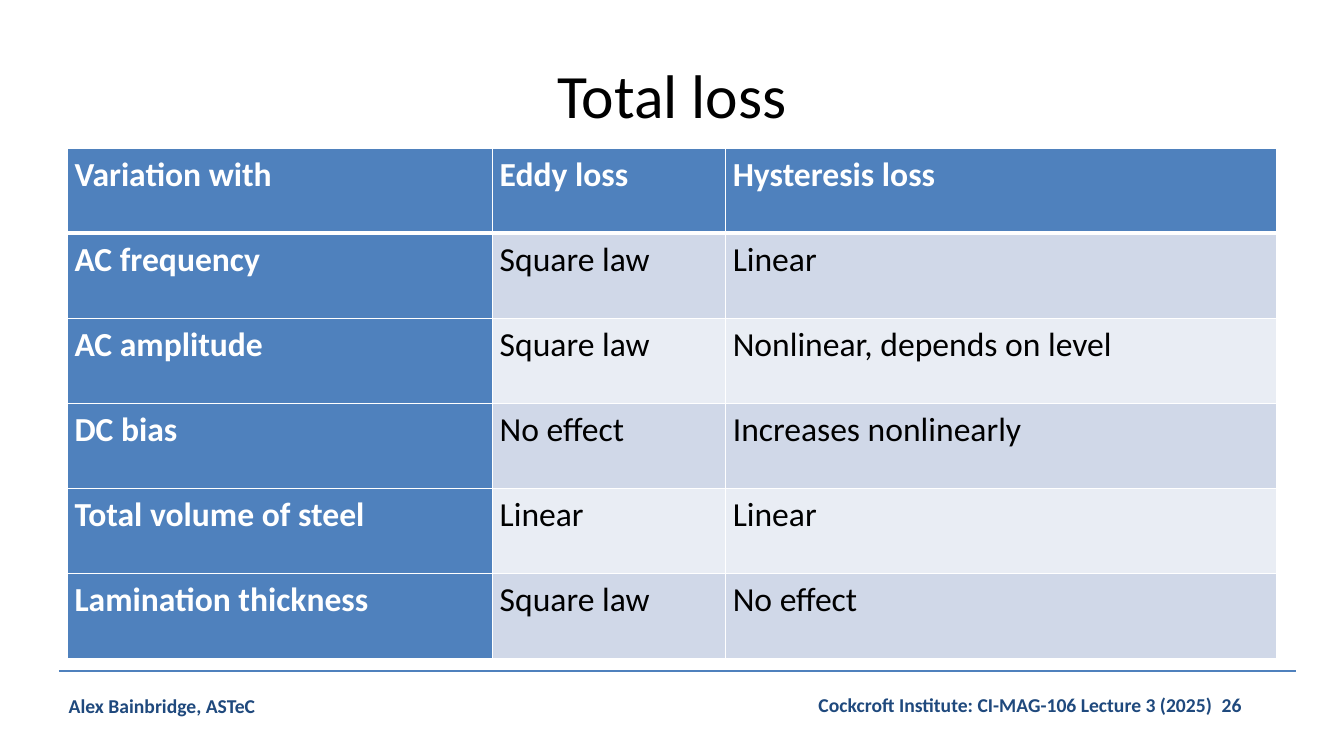
from dataclasses import dataclass

from pptx import Presentation
from pptx.dml.color import RGBColor
from pptx.enum.shapes import MSO_CONNECTOR
from pptx.enum.text import MSO_ANCHOR, PP_ALIGN
from pptx.oxml import parse_xml
from pptx.oxml.ns import nsdecls
from pptx.util import Pt


@dataclass(frozen=True)
class Theme:
    font: str = "Calibri"
    blue: str = "4F81BD"
    navy: str = "1F497D"
    white: str = "FFFFFF"
    black: str = "000000"
    bands: tuple = ("D0D8E8", "E9EDF4")
    title_size: int = 44
    table_size: int = 24
    footer_size: int = 14


TITLE = "Total loss"
ROWS = [
    ("Variation with", "Eddy loss", "Hysteresis loss"),
    ("AC frequency", "Square law", "Linear"),
    ("AC amplitude", "Square law", "Nonlinear, depends on level"),
    ("DC bias", "No effect", "Increases nonlinearly"),
    ("Total volume of steel", "Linear", "Linear"),
    ("Lamination thickness", "Square law", "No effect"),
]
FOOTERS = [
    ("Alex Bainbridge, ASTeC", (56, 656, 493, 33), PP_ALIGN.LEFT),
    ("Cockcroft Institute: CI-MAG-106 Lecture 3 (2025)\t26", (627, 655, 708, 33), PP_ALIGN.CENTER),
]
SLIDE_SIZE = (1280, 720)
TITLE_BOX = (64, 29, 1152, 120)
TABLE_LEFT, TABLE_TOP = 64, 141
COL_WIDTHS = (405, 222, 525)
ROW_HEIGHT = 81
CELL_INSET = 7
RULE = (56, 639, 1234, 639)
EMU_PER_PX = 9525
theme = Theme()


def px(*values):
    return [v * EMU_PER_PX for v in values]


def style(p, size, color, bold=False, align=PP_ALIGN.LEFT):
    p.alignment = align
    for r in p.runs:
        r.font.name = theme.font
        r.font.size = Pt(size)
        r.font.bold = bold
        r.font.color.rgb = RGBColor.from_string(color)


def add_borders(cell, widths):
    tcPr = cell._tc.get_or_add_tcPr()
    for i, (side, width) in enumerate(zip("LRTB", widths)):
        tcPr.insert(i, parse_xml(
            f'<a:ln{side} {nsdecls("a")} w="{Pt(width)}"><a:solidFill>'
            f'<a:srgbClr val="{theme.white}"/></a:solidFill></a:ln{side}>'))


def add_title(s):
    sp = s.shapes.title
    sp.left, sp.top, sp.width, sp.height = px(*TITLE_BOX)
    tf = sp.text_frame
    tf.text = TITLE
    tf.vertical_anchor = MSO_ANCHOR.MIDDLE
    style(tf.paragraphs[0], theme.title_size, theme.black, align=PP_ALIGN.CENTER)


def add_loss_table(s):
    box = px(TABLE_LEFT, TABLE_TOP, sum(COL_WIDTHS), ROW_HEIGHT * len(ROWS))
    table = s.shapes.add_table(len(ROWS), len(COL_WIDTHS), *box).table
    table.first_col = True
    for column, width in zip(table.columns, px(*COL_WIDTHS)):
        column.width = width
    for i, row in enumerate(ROWS):
        table.rows[i].height = ROW_HEIGHT * EMU_PER_PX
        for j, text in enumerate(row):
            cell = table.cell(i, j)
            header = i == 0 or j == 0
            fill = theme.blue if header else theme.bands[(i - 1) % 2]
            cell.fill.solid()
            cell.fill.fore_color.rgb = RGBColor.from_string(fill)
            cell.margin_left = cell.margin_right = CELL_INSET * EMU_PER_PX
            cell.margin_top = cell.margin_bottom = 0
            cell.vertical_anchor = MSO_ANCHOR.TOP
            cell.text_frame.text = text
            p = cell.text_frame.paragraphs[0]
            p.line_spacing = 1.15
            style(p, theme.table_size, theme.white if header else theme.black, header)
            add_borders(cell, (1, 1, 3 if i == 1 else 1, 3 if i == 0 else 1))


def add_footer(s):
    rule = s.shapes.add_connector(MSO_CONNECTOR.STRAIGHT, *px(*RULE))
    rule.line.color.rgb = RGBColor.from_string(theme.blue)
    rule.line.width = Pt(2)
    rule._element.spPr.append(parse_xml(f'<a:effectLst {nsdecls("a")}/>'))
    for text, box, align in FOOTERS:
        tf = s.shapes.add_textbox(*px(*box)).text_frame
        tf.word_wrap = True
        tf.text = text
        style(tf.paragraphs[0], theme.footer_size, theme.navy, True, align)


def main():
    prs = Presentation()
    prs.slide_width, prs.slide_height = px(*SLIDE_SIZE)
    s = prs.slides.add_slide(prs.slide_layouts[5])
    add_footer(s)
    add_title(s)
    add_loss_table(s)
    prs.save("out.pptx")


if __name__ == "__main__":
    main()
